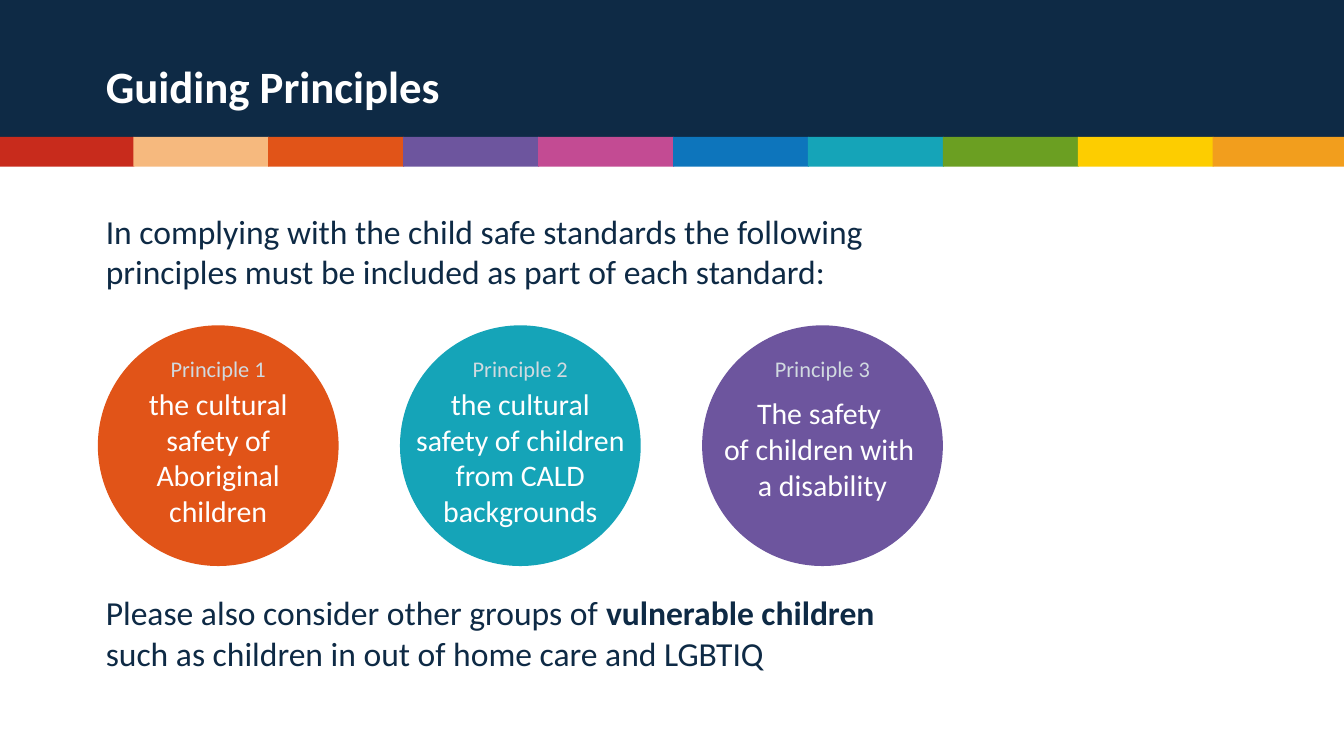
from copy import deepcopy
from dataclasses import dataclass

from pptx import Presentation
from pptx import util as u
from pptx.dml.color import RGBColor
from pptx.enum import shapes, text

NAVY, WHITE, PALE = "0E2A45", "FFFFFF", "D1DAE0"
ORANGE, TEAL, PURPLE = "E15418", "15A4B8", "6D559E"
STRIPES = ["C82B1C", "F6B97E", ORANGE, PURPLE, "C34B93",
           "0D75BC", TEAL, "6B9F22", "FDCD00", "F29E1D"]
MARGIN, BODY_WIDTH = 1.75, 15.98
CIRCLE_LEFT, CIRCLE_TOP, CIRCLE_SIZE, CIRCLE_PITCH = 1.85, 6.15, 4.55, 5.71


@dataclass
class Area:
    left: float
    top: float
    width: float
    height: float

    def lengths(self) -> list[u.Length]:
        return [u.Cm(n) for n in (self.left, self.top, self.width, self.height)]


@dataclass
class Span:
    words: str
    size: float
    colour: str
    bold: bool = False


@dataclass
class Principle:
    label: str
    words: str
    fill: str
    words_top: float
    words_height: float
    anchor: text.MSO_ANCHOR = text.MSO_ANCHOR.TOP


PRINCIPLES = [
    Principle("Principle 1", "the cultural safety of Aboriginal children",
              ORANGE, 7.16, 3.0),
    Principle("Principle 2", "the cultural safety of children from CALD backgrounds",
              TEAL, 7.16, 3.0),
    Principle("Principle 3", "The safety \nof children with \na disability",
              PURPLE, 7.32, 2.31, text.MSO_ANCHOR.MIDDLE),
]


def colour(value: str) -> RGBColor:
    return RGBColor.from_string(value)


def add_block(page, kind: shapes.MSO_SHAPE, area: Area, fill: str) -> None:
    """Draw a plain filled shape without outline or shadow."""
    block = page.shapes.add_shape(kind, *area.lengths())
    block.shadow.inherit = False
    block.fill.solid()
    block.fill.fore_color.rgb = colour(fill)
    block.line.fill.background()


def add_text(page, area: Area, spans: list[Span],
             align: text.PP_ALIGN = text.PP_ALIGN.LEFT,
             anchor: text.MSO_ANCHOR = text.MSO_ANCHOR.TOP) -> None:
    """Write one paragraph; a newline in a span is a line break."""
    frame = page.shapes.add_textbox(*area.lengths()).text_frame
    frame.word_wrap = True
    frame.vertical_anchor = anchor
    para = frame.paragraphs[0]
    para.alignment = align
    for item in spans:
        formats = {"name": "Calibri", "size": u.Pt(item.size), "bold": item.bold}
        for number, line in enumerate(item.words.split("\n")):
            if number:
                # The break keeps the text size, so line heights stay even
                para.add_line_break()
                para._p[-1].append(deepcopy(span._r.rPr))
            span = para.add_run()
            span.text = line
            for name, value in formats.items():
                setattr(span.font, name, value)
            span.font.color.rgb = colour(item.colour)


def add_principle(page, item: Principle, left: float) -> None:
    add_block(page, shapes.MSO_SHAPE.OVAL,
              Area(left, CIRCLE_TOP, CIRCLE_SIZE, CIRCLE_SIZE), item.fill)
    add_text(page, Area(left, item.words_top, CIRCLE_SIZE, item.words_height),
             [Span(item.words, 16, WHITE)], text.PP_ALIGN.CENTER, item.anchor)
    add_text(page, Area(left, 6.58, CIRCLE_SIZE, 0.76),
             [Span(item.label, 12, PALE)], text.PP_ALIGN.CENTER)


def main() -> None:
    deck = Presentation()
    deck.slide_width, deck.slide_height = u.Cm(25.4), u.Cm(14.29)
    page = deck.slides.add_slide(deck.slide_layouts[6])

    # Header with coloured stripes
    add_block(page, shapes.MSO_SHAPE.RECTANGLE, Area(0, 0, 25.4, 2.62), NAVY)
    for index, fill in enumerate(STRIPES):
        add_block(page, shapes.MSO_SHAPE.RECTANGLE,
                  Area(2.55 * index - 0.03, 2.59, 2.57, 0.56), fill)
    add_text(page, Area(MARGIN, 0.58, 21.92, 2.06),
             [Span("Guiding Principles", 24, WHITE, True)],
             anchor=text.MSO_ANCHOR.MIDDLE)

    # Introduction
    add_text(page, Area(MARGIN, 3.86, BODY_WIDTH, 2.06),
             [Span("In complying with the child safe standards the following\n"
                   "principles must be included as part of each standard:", 18, NAVY)])

    # Principles
    for index, item in enumerate(PRINCIPLES):
        add_principle(page, item, CIRCLE_LEFT + CIRCLE_PITCH * index)

    # Closing note
    add_text(page, Area(MARGIN, 11.07, BODY_WIDTH, 1.96),
             [Span("Please also consider other groups of ", 18, NAVY),
              Span("vulnerable children", 18, NAVY, True),
              Span(" such as children in out of home care and LGBTIQ", 18, NAVY)])

    deck.save("out.pptx")


if __name__ == "__main__":
    main()
